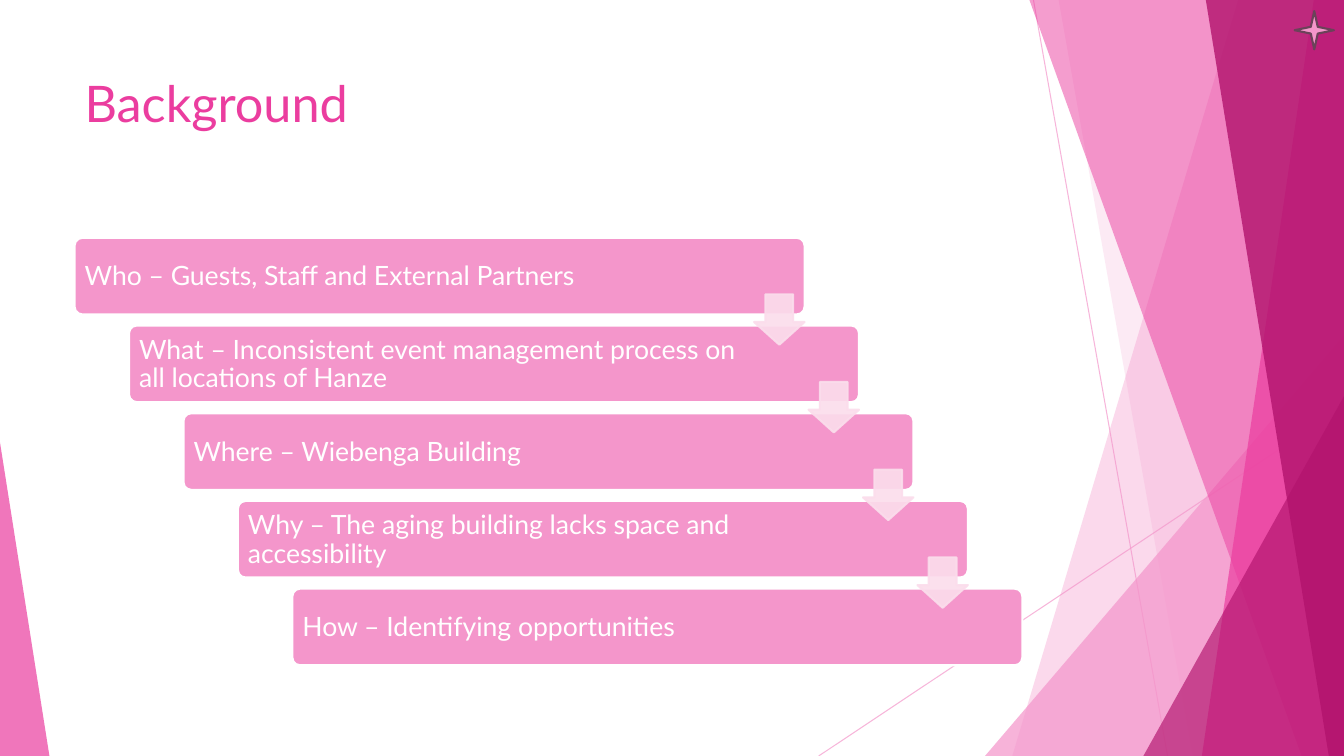
"""Build the Background slide: five cascading steps beside a pink faceted border."""
from lxml import etree
from pptx import Presentation
from pptx import util as u
from pptx.dml.color import RGBColor
from pptx.enum import shapes, text
from pptx.oxml.ns import qn

PINK, ROSE, PLUM = "F496CB", "EB3D9F", "B2136D"
PALE, DARK, WHITE = "FBDDEC", "6B4259", "FFFFFF"
FONT = "Lato"
W, H = 13.33, 7.5
TITLE = "Background"
STEPS = [
    "Who – Guests, Staff and External Partners",
    "What – Inconsistent event management process on all locations of Hanze",
    "Where – Wiebenga Building",
    "Why – The aging building lacks space and accessibility",
    "How – Identifying opportunities",
]
RAYS = [(10.25, 0, 11.58, H), (W, 4.03, 8.12, H)]
# top-left x, bottom-left x, colour, opacity
FACETS = [
    ("band", 12.28, 10.04, PINK, 36),
    ("band", 10.5, 11.83, PINK, 20),
    ("corner", (9.77, 3.33, 3.56, 4.17), 1, PINK, 72),
    ("band", 10.21, 12.91, ROSE, 50),
    ("band", 13.03, 11.92, ROSE, 70),
    ("band", 11.96, 13.18, PLUM, 80),
    ("corner", (11.34, 3.93, 1.99, 3.57), 1, PLUM, 66),
    ("corner", (0, 4.39, 0.49, 3.11), 0, ROSE, 70),
]
STEP_X, STEP_Y = 0.54, 0.87

prs = Presentation()
prs.slide_width, prs.slide_height = u.Inches(W), u.Inches(H)
s = prs.slides.add_slide(prs.slide_layouts[6])


def paint(fill, color, opacity=100):
    fill.solid()
    fill.fore_color.rgb = RGBColor.from_string(color)
    if opacity < 100:
        clr = fill._xPr.find(qn("a:solidFill"))[0]
        etree.SubElement(clr, qn("a:alpha")).set("val", str(opacity * 1000))


def style(sp, fill, opacity=100, line=None):
    sp.shadow.inherit = False
    paint(sp.fill, fill, opacity)
    if line:
        paint(sp.line.fill, line, opacity)
        sp.line.width = u.Pt(1.5)
    else:
        sp.line.fill.background()


def add_preset(kind, box, fill, opacity=100, line=None, adj=()):
    sp = s.shapes.add_shape(kind, *map(u.Inches, box))
    for i, value in enumerate(adj):
        sp.adjustments[i] = value
    style(sp, fill, opacity, line)


def add_band(top_x, bottom_x, color, opacity):
    points = [(W, 0), (W, H), (bottom_x, H)]
    builder = s.shapes.build_freeform(u.Inches(top_x), 0)
    builder.add_line_segments([(u.Inches(x), u.Inches(y)) for x, y in points])
    style(builder.convert_to_shape(), color, opacity)


def add_ray(ends):
    line = s.shapes.add_connector(shapes.MSO_CONNECTOR.STRAIGHT, *map(u.Inches, ends))
    line.line.width = u.Pt(0.75)
    paint(line.line.fill, PINK, 70)
    etree.SubElement(line._element.spPr, qn("a:effectLst"))


def add_text(box, words, size, color, anchor, inset_x, inset_y, spacing=1.0):
    tf = s.shapes.add_textbox(*map(u.Inches, box)).text_frame
    tf.word_wrap = True
    tf.vertical_anchor = anchor
    tf.margin_left = tf.margin_right = u.Inches(inset_x)
    tf.margin_top = tf.margin_bottom = u.Inches(inset_y)
    p = tf.paragraphs[0]
    p.line_spacing = spacing
    r = p.add_run()
    r.text = words
    r.font.name, r.font.size = FONT, u.Pt(size)
    r.font.color.rgb = RGBColor.from_string(color)


for ray in RAYS:
    add_ray(ray)
for kind, start, end, color, opacity in FACETS:
    if kind == "band":
        add_band(start, end, color, opacity)
    else:
        add_preset(shapes.MSO_SHAPE.ISOSCELES_TRIANGLE, start, color, opacity, adj=[end])

add_text((0.74, 0.67, 9.4, 1.44), TITLE, 36, ROSE, text.MSO_ANCHOR.TOP, 0.1, 0.05)

for i, step in enumerate(STEPS):
    x, y = 0.74 + i * STEP_X, 2.36 + i * STEP_Y
    add_preset(shapes.MSO_SHAPE.ROUNDED_RECTANGLE, (x, y, 7.24, 0.76), PINK,
               line=WHITE, adj=[0.1])
    add_text((x + 0.02, y + 0.03, 6.16 if i else 6.32, 0.72), step, 19, WHITE,
             text.MSO_ANCHOR.MIDDLE, 0.08, 0.08, 0.9)

for i in range(len(STEPS) - 1):
    add_preset(shapes.MSO_SHAPE.DOWN_ARROW,
               (7.48 + i * STEP_X, 2.92 + i * STEP_Y, 0.5, 0.5),
               PALE, 90, PALE, adj=[0.55, 0.45])

add_preset(shapes.MSO_SHAPE.STAR_4_POINT, (12.84, 0.11, 0.39, 0.38), PINK, line=DARK)

prs.save("out.pptx")
